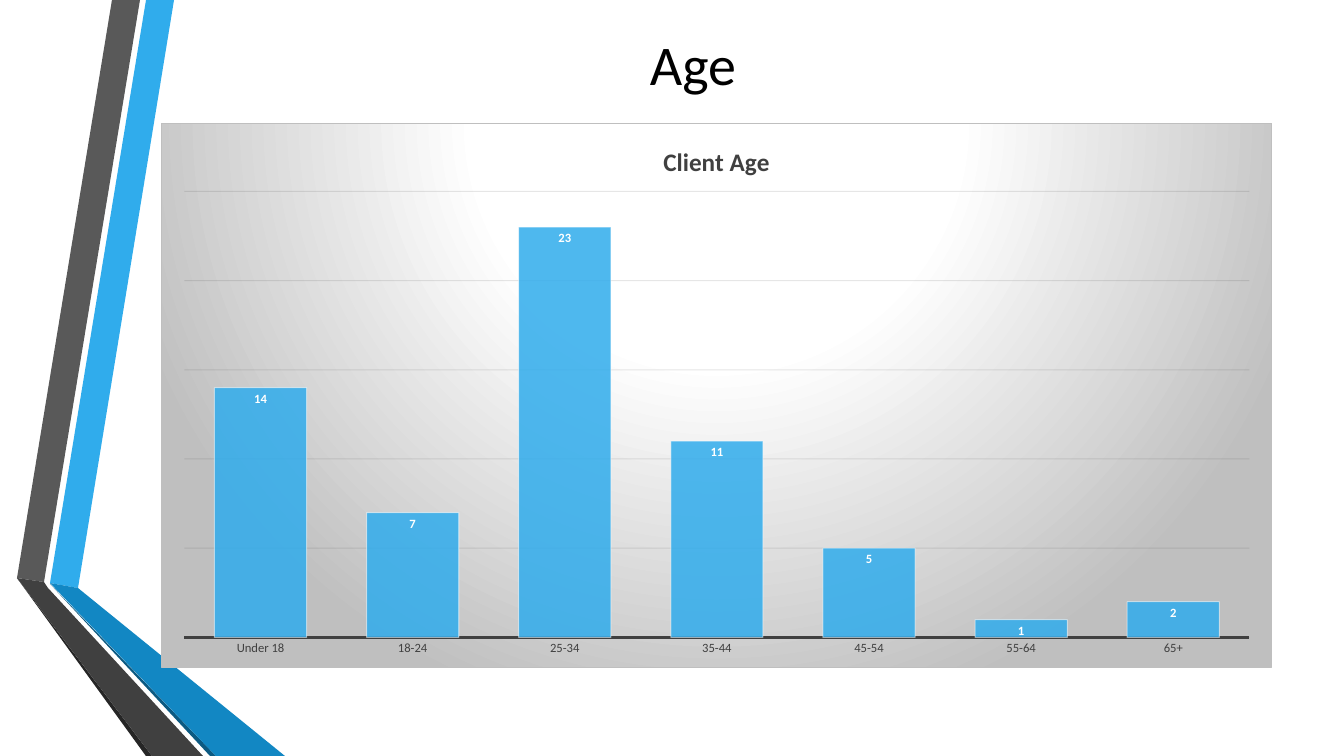
from lxml.etree import SubElement
from pptx import Presentation
from pptx.chart.data import CategoryChartData
from pptx.dml.color import RGBColor
from pptx.enum.chart import XL_CHART_TYPE, XL_LABEL_POSITION, XL_TICK_MARK
from pptx.enum.text import MSO_ANCHOR, PP_ALIGN
from pptx.oxml import parse_xml
from pptx.oxml.ns import nsdecls, qn
from pptx.util import Pt

PX = 9144000 / 1008  # 100.8 px to the inch


def px(n):
    return round(n * PX)


def rgb(value):
    return RGBColor.from_string(value)


def set_alpha(el, percents):
    """Give the colours inside el their opacity, in document order."""
    for clr, pct in zip(el.iter(qn("a:srgbClr")), percents):
        SubElement(clr, qn("a:alpha")).set("val", str(pct * 1000))


class Deck:
    font = "Calibri"
    accent = "30ACEC"
    text = "404040"

    def __init__(self, width, height):
        self.prs = Presentation()
        self.prs.slide_width, self.prs.slide_height = px(width), px(height)
        self.s = None

    def add_slide(self):
        self.s = self.prs.slides.add_slide(self.prs.slide_layouts[5])

    def style(self, font, size, color, bold=False):
        font.name, font.size, font.bold = self.font, Pt(size), bold
        font.color.rgb = rgb(color)

    def stroke(self, line, color, width):
        line.color.rgb, line.width = rgb(color), Pt(width)

    def polygon(self, color, points):
        builder = self.s.shapes.build_freeform(*points[0], scale=PX)
        builder.add_line_segments(points[1:], close=True)
        sp = builder.convert_to_shape()
        sp.shadow.inherit = False
        sp.fill.solid()
        sp.fill.fore_color.rgb = rgb(color)
        sp.line.fill.background()

    def title(self, text, box):
        sp = self.s.shapes.title
        sp.left, sp.top, sp.width, sp.height = map(px, box)
        tf = sp.text_frame
        tf.vertical_anchor = MSO_ANCHOR.MIDDLE
        p = tf.paragraphs[0]
        p.alignment = PP_ALIGN.CENTER
        r = p.add_run()
        r.text = text
        self.style(r.font, 40, "000000")

    def column_chart(self, title, values, box, plot_box):
        data = CategoryChartData()
        data.categories = list(values)
        data.add_series("Series 1", list(values.values()))
        chart = self.s.shapes.add_chart(
            XL_CHART_TYPE.COLUMN_CLUSTERED, *map(px, box), data).chart
        chart.has_legend = False
        self.style(chart.font, 10, "000000")

        # Chart title
        chart.has_title = True
        r = chart.chart_title.text_frame.paragraphs[0].add_run()
        r.text = title
        self.style(r.font, 18, self.text, bold=True)

        # Axes and gridlines
        cat = chart.category_axis
        cat.major_tick_mark = XL_TICK_MARK.NONE
        self.style(cat.tick_labels.font, 9, self.text)
        self.stroke(cat.format.line, self.text, 1.5)
        val = chart.value_axis
        val.minimum_scale, val.maximum_scale, val.major_unit = 0, 25, 5
        val.visible = False
        self.stroke(val.major_gridlines.format.line, "0D0D0D", 0.75)
        set_alpha(val._element.find(qn("c:majorGridlines")), [10])

        # Columns and their labels
        plot = chart.plots[0]
        plot.gap_width = 65
        plot.vary_by_categories = False
        ser = plot.series[0]
        ser.format.fill.solid()
        ser.format.fill.fore_color.rgb = rgb(self.accent)
        self.stroke(ser.format.line, "FFFFFF", 0.75)
        set_alpha(ser._element.find(qn("c:spPr")), [85, 50])
        labels = ser.data_labels
        labels.show_value = True
        labels.position = XL_LABEL_POSITION.INSIDE_END
        self.style(labels.font, 9, "FFFFFF", bold=True)

        self.chart_area(chart)
        self.plot_area(chart, box, plot_box)

    def chart_area(self, chart):
        """Square corners, a radial grey gradient and a thin border."""
        stops = "".join(
            f'<a:gs pos="{pos * 1000}"><a:srgbClr val="{color}"/></a:gs>'
            for pos, color in [(0, "FFFFFF"), (39, "FFFFFF"), (100, "BFBFBF")])
        root = chart._chartSpace
        root.find(qn("c:date1904")).addnext(
            parse_xml(f'<c:roundedCorners {nsdecls("c")} val="0"/>'))
        root.find(qn("c:chart")).addnext(parse_xml(
            f'<c:spPr {nsdecls("c", "a")}><a:gradFill><a:gsLst>{stops}</a:gsLst>'
            '<a:path path="circle"><a:fillToRect l="50000" t="-80000" r="50000" b="180000"/>'
            f'</a:path></a:gradFill><a:ln w="{Pt(0.75)}"><a:solidFill>'
            '<a:srgbClr val="BFBFBF"/></a:solidFill></a:ln></c:spPr>'))

    def plot_area(self, chart, box, plot_box):
        left, top, width, height = box
        x, y, w, h = plot_box
        parts = {"x": (x - left) / width, "y": (y - top) / height,
                 "w": w / width, "h": h / height}
        rows = "".join(f'<c:{k} val="{v:.4f}"/>' for k, v in parts.items())
        area = chart._chartSpace.find(qn("c:chart")).find(qn("c:plotArea"))
        for old in area.findall(qn("c:layout")):
            area.remove(old)
        area.insert(0, parse_xml(
            f'<c:layout {nsdecls("c")}><c:manualLayout><c:layoutTarget val="inner"/>'
            '<c:xMode val="edge"/><c:yMode val="edge"/>'
            f'{rows}</c:manualLayout></c:layout>'))


def main():
    deck = Deck(1344, 756)
    deck.add_slide()

    # Folded ribbons at the left edge
    ribbons = [
        ("30ACEC", [(50, 583), (78, 588), (174, 0), (146, 0)]),
        ("595959", [(140, 0), (112, 0), (17, 578), (44, 582)]),
        ("262626", [(17, 578), (146, 756), (152, 756)]),
        ("0C5A82", [(50, 584), (210, 756), (216, 756)]),
        ("1287C3", [(50, 583), (216, 756), (285, 756), (78, 588)]),
        ("404040", [(203, 756), (48, 588), (44, 582), (17, 578), (152, 756)]),
    ]
    for color, points in ribbons:
        deck.polygon(color, points)

    # Title and age chart
    deck.title("Age", (114, 4, 1158, 119))
    ages = {"Under 18": 14, "18-24": 7, "25-34": 23, "35-44": 11,
            "45-54": 5, "55-64": 1, "65+": 2}
    deck.column_chart("Client Age", ages, (161, 123, 1111, 545),
                      (184, 191, 1066, 447))

    deck.prs.save("out.pptx")


if __name__ == "__main__":
    main()
